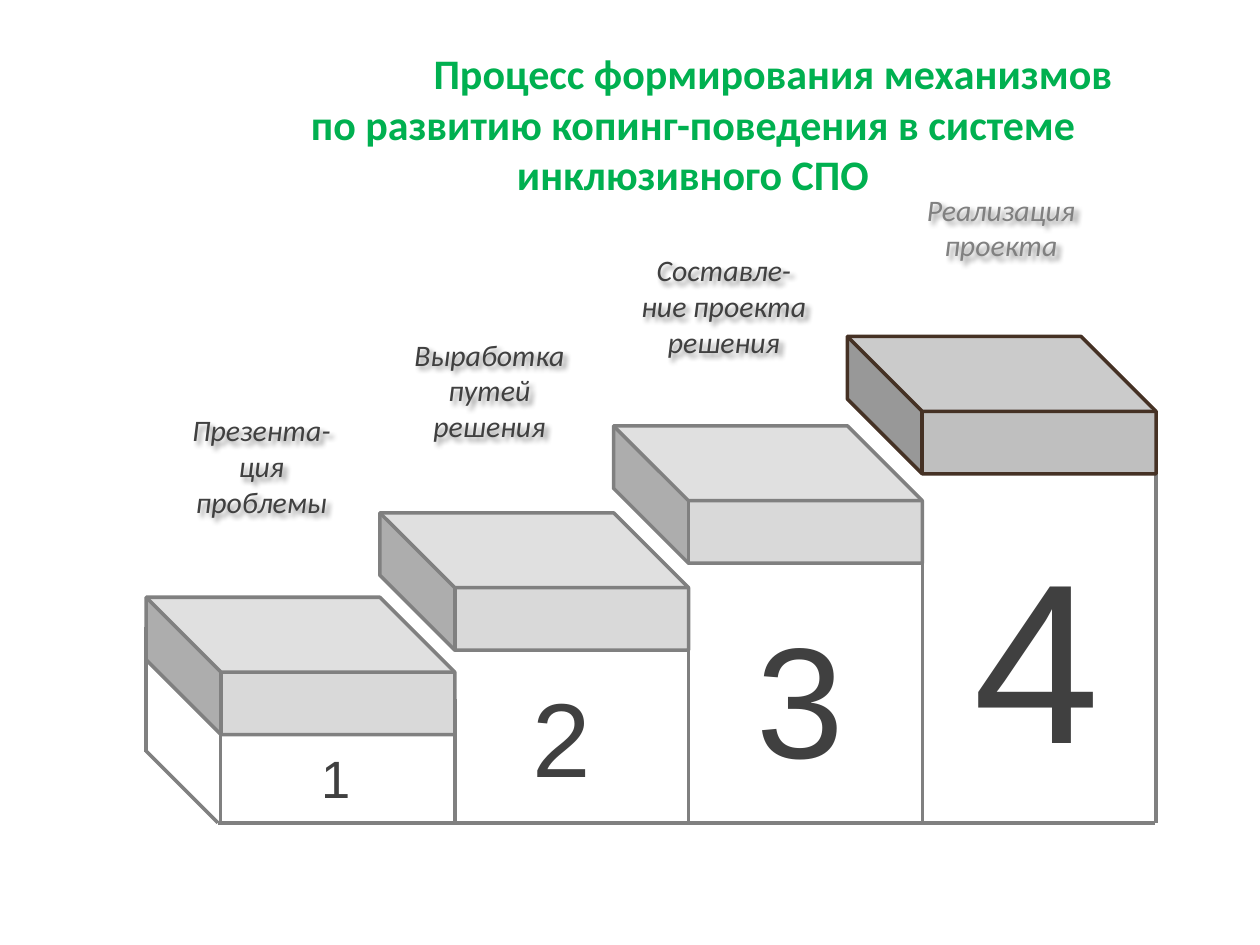
from pptx import Presentation
from pptx.util import Inches, Pt
from pptx.dml.color import RGBColor as Rgb
from pptx.enum.shapes import MSO_SHAPE as Shape, MSO_CONNECTOR as Conn
from pptx.enum.text import PP_ALIGN as Align, MSO_AUTO_SIZE as Fit
from pptx.oxml.ns import qn
from lxml.etree import SubElement as Sub

HUES = {"title": "00B050", "ink": "404040", "gray": "808080",
        "face": "D9D9D9", "last": "BFBFBF", "brown": "453124"}


class Board:
    def __init__(self, slide):
        self.shapes = slide.shapes

    def hue(self, name):
        return Rgb.from_string(HUES[name])

    def cube(self, x, y, fill, edge):
        box = self.shapes.add_shape(
            Shape.CUBE, Inches(x), Inches(y), Inches(2.45), Inches(1.09))
        box.adjustments[0] = 0.545
        box.shadow.inherit = False
        box.fill.solid()
        box.fill.fore_color.rgb = self.hue(fill)
        box.line.color.rgb = self.hue(edge)
        box.line.width = Pt(2)
        box._element.spPr.find(qn("a:xfrm")).set("flipH", "1")

    def line(self, x1, y1, x2, y2):
        line = self.shapes.add_connector(
            Conn.STRAIGHT, Inches(x1), Inches(y1), Inches(x2), Inches(y2))
        line.line.color.rgb = self.hue("gray")
        line.line.width = Pt(2)
        Sub(line._element.spPr, qn("a:effectLst"))

    def text(self, words, x, y, w, h, size, hue, face="Calibri",
             bold=False, slant=False):
        box = self.shapes.add_textbox(Inches(x), Inches(y), Inches(w), Inches(h))
        frame = box.text_frame
        frame.word_wrap = True
        frame.auto_size = Fit.SHAPE_TO_FIT_TEXT
        para = frame.paragraphs[0]
        para.text = words
        para.alignment = Align.CENTER
        font = para.font
        font.name, font.size = face, Pt(size)
        font.bold, font.italic = bold, slant
        font.color.rgb = self.hue(hue)
        return box

    def label(self, words, x, y, h, hue):
        box = self.text(words, x, y, 1.61, h, 17, hue, slant=True)
        # Soft shadow behind the letters
        glow = Sub(box._element.spPr, qn("a:effectLst"))
        cast = Sub(glow, qn("a:outerShdw"), blurRad="38100", dist="38100",
                   dir="2700000", algn="tl")
        tint = Sub(cast, qn("a:srgbClr"), val="000000")
        Sub(tint, qn("a:alpha"), val="43000")

    def title(self, words):
        box = self.text(words, 2, 0.33, 7, 1.31, 24, "title", bold=True)
        # First line starts further right
        props = box.text_frame.paragraphs[0]._p.get_or_add_pPr()
        props.set("marL", "0")
        props.set("indent", str(Inches(1.27)))


def main():
    deck = Presentation()
    deck.slide_width, deck.slide_height = Inches(10), Inches(7.5)
    board = Board(deck.slides.add_slide(deck.slide_layouts[6]))
    left, step, floor = 1.16, 1.855, 6.53

    board.title("Процесс формирования механизмов по развитию "
                "копинг-поведения в системе инклюзивного СПО")

    # Steps: cube top, right edge top, label and its box, number box and size
    steps = [
        (4.74, 5.55, "Презента-ция проблемы", 1.27, 3.22, 0.95, 1.86, 5.87, 0.61, 30),
        (4.07, 4.93, "Выработка путей решения", 3.08, 2.62, 0.95, 3.65, 5.29, 1.11, 60),
        (3.38, 4.25, "Составле-ние проекта решения", 4.94, 1.95, 1.23, 5.55, 4.72, 1.62, 90),
        (2.67, 3.45, "Реализация проекта", 7.14, 1.47, 0.67, 7.42, 4.05, 2.29, 130),
    ]
    for i, (top, edge, words, lx, ly, lh, nx, ny, nh, size) in enumerate(steps):
        last = i == len(steps) - 1
        x = left + i * step
        right = x + 2.45
        board.line(right, edge, right, floor)
        board.cube(x, top, "last" if last else "face", "brown" if last else "gray")
        board.label(words, lx, ly, lh, "gray" if last else "ink")
        board.text(str(i + 1), nx, ny, 1.61, nh, size, "ink", face="Arial")

    # Base and left side
    board.line(left, 5.96, 1.73, floor)
    board.line(1.73, floor, 9.17, floor)
    board.line(1.75, 5.55, 1.75, floor)
    board.line(left, 4.98, left, 5.97)

    deck.save("out.pptx")


if __name__ == "__main__":
    main()
